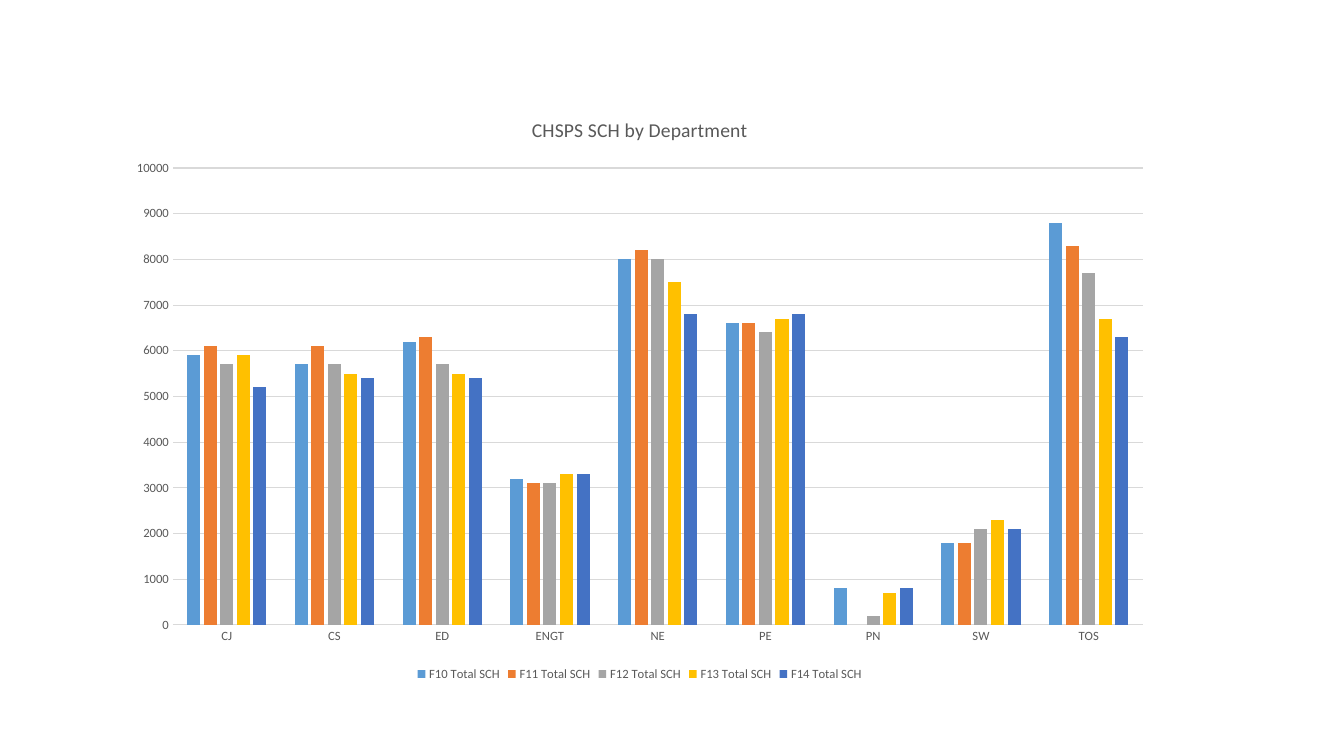
from pptx import Presentation
from pptx.chart.data import CategoryChartData
from pptx.dml.color import RGBColor
from pptx.enum import chart as ch
from pptx.util import Inches, Pt

FONT = "Calibri"
COLORS = {
    "text": "595959",
    "line": "D9D9D9",
    "F10": "5B9BD5",
    "F11": "ED7D31",
    "F12": "A5A5A5",
    "F13": "FFC000",
    "F14": "4472C4",
}
DEPARTMENTS = ["CJ", "CS", "ED", "ENGT", "NE", "PE", "PN", "SW", "TOS"]
CREDIT_HOURS = {
    "F10": [5900, 5700, 6200, 3200, 8000, 6600, 800, 1800, 8800],
    "F11": [6100, 6100, 6300, 3100, 8200, 6600, None, 1800, 8300],
    "F12": [5700, 5700, 5700, 3100, 8000, 6400, 200, 2100, 7700],
    "F13": [5900, 5500, 5500, 3300, 7500, 6700, 700, 2300, 6700],
    "F14": [5200, 5400, 5400, 3300, 6800, 6800, 800, 2100, 6300],
}


def rgb(name):
    return RGBColor.from_string(COLORS[name])


def style_font(font, size):
    font.name = FONT
    font.size = Pt(size)
    font.bold = False
    font.color.rgb = rgb("text")


def style_line(line):
    line.color.rgb = rgb("line")
    line.width = Pt(0.75)


def add_department_chart(slide):
    data = CategoryChartData(number_format="0")
    data.categories = DEPARTMENTS
    for term, hours in CREDIT_HOURS.items():
        data.add_series(f"{term} Total SCH", hours)
    frame = slide.shapes.add_chart(
        ch.XL_CHART_TYPE.COLUMN_CLUSTERED,
        Inches(1.15), Inches(0.95), Inches(10.39), Inches(5.85), data)
    return frame.chart


def style_title(chart):
    chart.has_title = True
    title = chart.chart_title
    title.include_in_layout = False
    heading = title.text_frame.paragraphs[0]
    heading.text = "CHSPS SCH by Department"
    style_font(heading.runs[0].font, 14)


def style_columns(chart):
    columns = chart.plots[0]
    columns.gap_width = 219
    columns.overlap = -27
    columns.vary_by_categories = False
    for term, series in zip(CREDIT_HOURS, columns.series):
        series.invert_if_negative = False
        series.format.fill.solid()
        series.format.fill.fore_color.rgb = rgb(term)


def style_axes(chart):
    departments, hours = chart.category_axis, chart.value_axis
    for axis in (departments, hours):
        axis.major_tick_mark = ch.XL_TICK_MARK.NONE
        axis.minor_tick_mark = ch.XL_TICK_MARK.NONE
        style_font(axis.tick_labels.font, 9)
    style_line(departments.format.line)

    hours.minimum_scale, hours.maximum_scale = 0, 10000
    hours.major_unit = 1000
    hours.tick_labels.number_format = "0"
    hours.tick_labels.number_format_is_linked = False
    hours.format.line.fill.background()
    hours.has_major_gridlines = True
    style_line(hours.major_gridlines.format.line)


def style_legend(chart):
    chart.has_legend = True
    chart.legend.position = ch.XL_LEGEND_POSITION.BOTTOM
    chart.legend.include_in_layout = False
    style_font(chart.legend.font, 9)


def main():
    prs = Presentation()
    prs.slide_width, prs.slide_height = Inches(13.33), Inches(7.5)
    slide = prs.slides.add_slide(prs.slide_layouts[6])

    # Credit hours per department and fall term
    chart = add_department_chart(slide)
    style_font(chart.font, 10)
    style_title(chart)
    style_columns(chart)
    style_axes(chart)
    style_legend(chart)

    prs.save("out.pptx")


if __name__ == "__main__":
    main()
